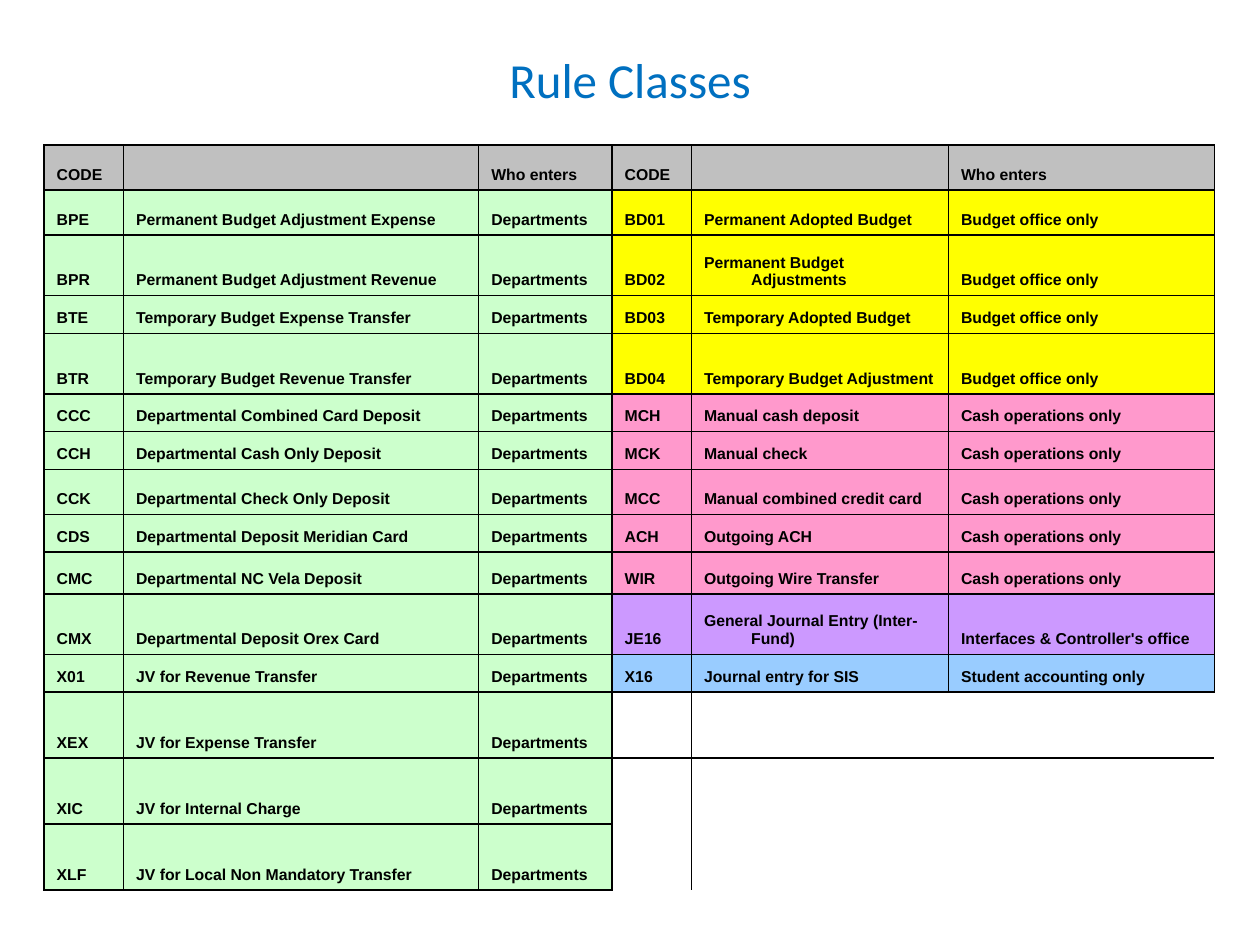
from lxml.etree import SubElement
from pptx import Presentation
from pptx.dml.color import RGBColor
from pptx.enum.text import MSO_ANCHOR as Anchor, PP_ALIGN as Align
from pptx.oxml.ns import qn
from pptx.util import Cm, Pt

BLACK, GREY, GREEN = "000000", "C0C0C0", "CCFFCC"
YELLOW, PINK, PURPLE, BLUE = "FFFF00", "FF99CC", "CC99FF", "99CCFF"

COLUMN_WIDTHS = [1.6, 7.16, 2.69, 1.6, 5.18, 5.36]
ROW_HEIGHTS = [0.91, 0.91, 1.22, 0.76, 1.22, 0.76, 0.76, 0.91,
               0.76, 0.84, 1.22, 0.76, 1.33, 1.33, 1.33]
HEADER = ("CODE", "", "Who enters")

DEPARTMENT_RULES = [
    ("BPE", "Permanent Budget Adjustment Expense"),
    ("BPR", "Permanent Budget Adjustment Revenue"),
    ("BTE", "Temporary Budget Expense Transfer"),
    ("BTR", "Temporary Budget Revenue Transfer"),
    ("CCC", "Departmental Combined Card Deposit"),
    ("CCH", "Departmental Cash Only Deposit"),
    ("CCK", "Departmental Check Only Deposit"),
    ("CDS", "Departmental Deposit Meridian Card"),
    ("CMC", "Departmental NC Vela Deposit"),
    ("CMX", "Departmental Deposit Orex Card"),
    ("X01", "JV for Revenue Transfer"),
    ("XEX", "JV for Expense Transfer"),
    ("XIC", "JV for Internal Charge"),
    ("XLF", "JV for Local Non Mandatory Transfer"),
]

# Who enters, fill colour, rules
OFFICE_GROUPS = [
    ("Budget office only", YELLOW, [
        ("BD01", "Permanent Adopted Budget"),
        ("BD02", "Permanent Budget Adjustments"),
        ("BD03", "Temporary Adopted Budget"),
        ("BD04", "Temporary Budget Adjustment"),
    ]),
    ("Cash operations only", PINK, [
        ("MCH", "Manual cash deposit"),
        ("MCK", "Manual check"),
        ("MCC", "Manual combined credit card"),
        ("ACH", "Outgoing ACH"),
        ("WIR", "Outgoing Wire Transfer"),
    ]),
    ("Interfaces & Controller's office", PURPLE, [
        ("JE16", "General Journal Entry (Inter-Fund)"),
    ]),
    ("Student accounting only", BLUE, [
        ("X16", "Journal entry for SIS"),
    ]),
]


def color(hex_code):
    return RGBColor.from_string(hex_code)


def set_font(paragraph, name, size, hex_code, bold=False):
    font = paragraph.font
    font.name, font.size, font.bold = name, Pt(size), bold
    font.color.rgb = color(hex_code)


def add_title(slide, text):
    title = slide.shapes.title
    title.left, title.top = Cm(0), Cm(0.61)
    title.width, title.height = Cm(25.4), Cm(1.98)
    frame = title.text_frame
    frame.text = text
    frame.vertical_anchor = Anchor.MIDDLE
    frame.paragraphs[0].alignment = Align.CENTER
    set_font(frame.paragraphs[0], "Calibri", 28, "0070C0")


def add_borders(cell, sides):
    """Draw 1 pt black lines on the given sides, in the order L, R, T, B."""
    properties = cell._tc.get_or_add_tcPr()
    for side in sides:
        line = SubElement(properties, qn(f"a:ln{side}"), w=str(Pt(1)))
        fill = SubElement(line, qn("a:solidFill"))
        SubElement(fill, qn("a:srgbClr"), val=BLACK)


def format_cell(cell, text, fill):
    add_borders(cell, "LRTB")
    cell.fill.solid()
    cell.fill.fore_color.rgb = color(fill)
    cell.vertical_anchor = Anchor.BOTTOM
    cell.text = text
    paragraph = cell.text_frame.paragraphs[0]
    set_font(paragraph, "Arial", 9, BLACK, bold=True)
    hanging = Cm(0.95)
    indents = paragraph._p.get_or_add_pPr()
    indents.set("marL", str(hanging))
    indents.set("indent", str(-hanging))


def fill_block(table, first_column, rows):
    """Write (texts, fill) rows from the top; leave the cells below them clear."""
    for row_index in range(len(ROW_HEIGHTS)):
        for offset in range(len(HEADER)):
            cell = table.cell(row_index, first_column + offset)
            if row_index < len(rows):
                texts, fill = rows[row_index]
                format_cell(cell, texts[offset], fill)
            else:
                left = "L" if offset == 0 else ""
                top = "T" if row_index == len(rows) else ""
                add_borders(cell, left + top)
                cell.fill.background()


def add_rule_table(slide):
    frame = slide.shapes.add_table(
        len(ROW_HEIGHTS), len(COLUMN_WIDTHS), Cm(0.89), Cm(2.92),
        Cm(sum(COLUMN_WIDTHS)), Cm(sum(ROW_HEIGHTS)))
    table = frame.table
    table.first_row = table.horz_banding = False
    for column, width in zip(table.columns, COLUMN_WIDTHS):
        column.width = Cm(width)
    for row, height in zip(table.rows, ROW_HEIGHTS):
        row.height = Cm(height)

    header = [(HEADER, GREY)]
    department_rows = [((code, name, "Departments"), GREEN)
                       for code, name in DEPARTMENT_RULES]
    office_rows = [((code, name, office), fill)
                   for office, fill, rules in OFFICE_GROUPS
                   for code, name in rules]
    fill_block(table, 0, header + department_rows)
    fill_block(table, len(HEADER), header + office_rows)
    # The plain table style keeps the clear cells free of grid lines
    style = table._tbl.tblPr.find(qn("a:tableStyleId"))
    style.text = "{2D5ABB26-0587-4C30-8999-92F81FD0307C}"


def main():
    presentation = Presentation()
    presentation.slide_width, presentation.slide_height = Cm(25.4), Cm(19.05)
    slide = presentation.slides.add_slide(presentation.slide_layouts[5])
    add_title(slide, "Rule Classes")
    add_rule_table(slide)
    presentation.save("out.pptx")


if __name__ == "__main__":
    main()
